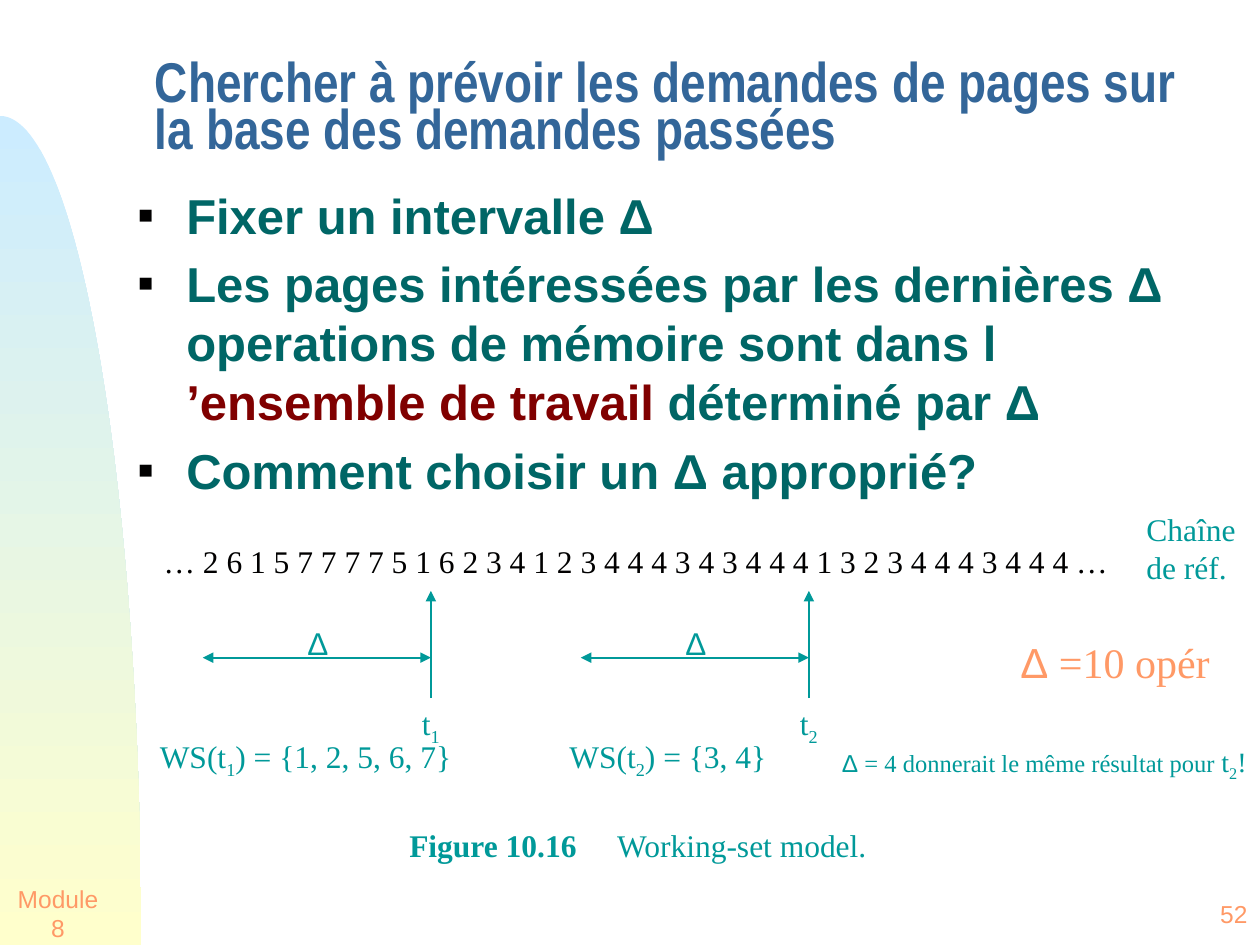
"""Build the working-set model slide."""
from lxml import etree
from pptx import Presentation
from pptx.dml.color import RGBColor
from pptx.enum.shapes import MSO_CONNECTOR
from pptx.enum.text import MSO_ANCHOR, MSO_AUTO_SIZE, PP_ALIGN
from pptx.oxml.ns import qn
from pptx.util import Inches, Pt

LEFT, CENTER, RIGHT = PP_ALIGN.LEFT, PP_ALIGN.CENTER, PP_ALIGN.RIGHT
TOP, MIDDLE = MSO_ANCHOR.TOP, MSO_ANCHOR.MIDDLE
STRAIGHT = MSO_CONNECTOR.STRAIGHT
NO_FIT = MSO_AUTO_SIZE.NONE
SERIF, SANS, NARROW = "Times New Roman", "Arial", "Arial Narrow"
COLORS = {
    "title": "336699", "body": "006666", "accent": "800000", "teal": "009999",
    "orange": "FF9966", "ink": "010000", "sky": "CCECFF", "cream": "FFFFCC",
}
REFERENCES = "2615777751623412344434344413234443444"


def rgb(name):
    """Return the named colour."""
    return RGBColor.from_string(COLORS[name])


def add_runs(p, runs, size=18, font=SERIF, color="teal", bold=False):
    """Fill a paragraph from a string or from (text, overrides) pairs."""
    pairs = [(runs, {})] if isinstance(runs, str) else runs
    for text, changes in pairs:
        r = p.add_run()
        r.text = text
        r.font.size = Pt(changes.get("size", size))
        r.font.name = changes.get("font", font)
        r.font.bold = changes.get("bold", bold)
        r.font.color.rgb = rgb(changes.get("color", color))
        if changes.get("sub"):
            r.font._element.set("baseline", "-25000")


def add_text(s, box, runs, align=LEFT, anchor=TOP, wrap=False, **fmt):
    """Add a text box with one paragraph and return the paragraph."""
    tf = s.shapes.add_textbox(*map(Inches, box)).text_frame
    tf.word_wrap = wrap
    tf.vertical_anchor = anchor
    p = tf.paragraphs[0]
    p.alignment = align
    add_runs(p, runs, **fmt)
    return p


def add_arrow(s, start, end, width, ends=("tailEnd",)):
    """Add a straight line with triangular heads."""
    c = s.shapes.add_connector(STRAIGHT, *map(Inches, start + end))
    c.line.color.rgb = rgb("teal")
    c.line.width = Pt(width)
    ln = c.line._get_or_add_ln()
    for name in ends:
        etree.SubElement(ln, qn("a:" + name), type="triangle")
    etree.SubElement(c._element.spPr, qn("a:effectLst"))


def add_side_curve(s):
    """Add the gradient quarter ellipse on the left edge."""
    curve = [(0, 0.92), (0.62, 0.92), (1.12, 3.87), (1.12, 7.5)]
    steps = 60
    points = []
    for i in range(steps + 1):
        t = i / steps
        weights = ((1 - t) ** 3, 3 * t * (1 - t) ** 2, 3 * t * t * (1 - t), t ** 3)
        points.append(tuple(Inches(sum(w * pt[k] for w, pt in zip(weights, curve)))
                            for k in (0, 1)))
    fb = s.shapes.build_freeform(*points[0])
    fb.add_line_segments(points[1:] + [(0, Inches(7.5))], close=True)
    sp = fb.convert_to_shape()
    sp.shadow.inherit = False
    sp.line.fill.background()
    sp.fill.gradient()
    sp.fill.gradient_angle = 270
    for stop, name, place in zip(sp.fill.gradient_stops, ("sky", "cream"), (0, 1)):
        stop.color.rgb = rgb(name)
        stop.position = place


def add_title(s, text):
    """Place and format the title placeholder."""
    sp = s.shapes.title
    sp.left, sp.top, sp.width, sp.height = map(Inches, (1.13, 0.36, 8.62, 1.05))
    tf = sp.text_frame
    tf.auto_size = NO_FIT
    tf.vertical_anchor = MIDDLE
    p = tf.paragraphs[0]
    p.alignment = LEFT
    p.line_spacing = 0.7
    add_runs(p, text, size=32, font=NARROW, color="title", bold=True)


def add_bullets(s, box, items):
    """Add a text box of square-bulleted paragraphs."""
    tf = s.shapes.add_textbox(*map(Inches, box)).text_frame
    tf.word_wrap = True
    for i, runs in enumerate(items):
        p = tf.add_paragraph() if i else tf.paragraphs[0]
        p.space_before = Pt(5.6)
        add_runs(p, runs, size=28, font=SANS, color="body", bold=True)
        pPr = p._p.get_or_add_pPr()
        pPr.set("marL", str(Inches(0.38)))
        pPr.set("indent", str(-Inches(0.38)))
        clr = etree.SubElement(pPr, qn("a:buClr"))
        etree.SubElement(clr, qn("a:srgbClr"), val=COLORS["ink"])
        etree.SubElement(pPr, qn("a:buSzPct"), val="50000")
        etree.SubElement(pPr, qn("a:buFont"), typeface=SANS)
        etree.SubElement(pPr, qn("a:buChar"), char="■")


def add_window(s, x, index, ws_left, ws_width, pages):
    """Add the interval, instant and working set that end at x."""
    sub = (index, {"sub": True})
    add_arrow(s, (x - 1.81, 5.22), (x, 5.22), 1, ("headEnd", "tailEnd"))
    add_arrow(s, (x, 5.54), (x, 4.69), 1.5)
    add_text(s, (x - 1.08, 4.9, 0.35, 0.4), "Δ", font=SANS)
    add_text(s, (x - 0.17, 5.54, 0.35, 0.4), [("t", {}), sub])
    add_text(s, (ws_left, 5.8, ws_width, 0.4),
             [("WS(t", {}), sub, (f") = {{{pages}}}", {})])


def add_caption(s):
    """Add the figure caption with a tab between number and name."""
    p = add_text(s, (3.15, 6.51, 3.85, 0.4),
                 [("Figure 10.16\t", {"bold": True}), ("Working-set model.", {})])
    tabs = etree.SubElement(p._p.get_or_add_pPr(), qn("a:tabLst"))
    etree.SubElement(tabs, qn("a:tab"), pos=str(Inches(1.65)), algn="l")


def main():
    """Build and save the slide."""
    prs = Presentation()
    prs.slide_width, prs.slide_height = Inches(10), Inches(7.5)
    s = prs.slides.add_slide(prs.slide_layouts[5])
    add_side_curve(s)
    footer = {"anchor": MIDDLE, "size": 14, "font": SANS, "color": "orange"}
    add_text(s, (0, 7, 0.92, 0.5), "Module 8", align=CENTER, **footer)
    add_text(s, (9.3, 7, 0.7, 0.5), "52", align=RIGHT, **footer)
    add_title(s, "Chercher à prévoir les demandes de pages sur la base des demandes passées")
    add_bullets(s, (1, 1.42, 8.62, 5.21), [
        "Fixer un intervalle Δ",
        [("Les pages intéressées par les dernières Δ operations de mémoire sont dans l ", {}),
         ("’ensemble de travail", {"color": "accent"}),
         (" déterminé par Δ", {})],
        "Comment choisir un Δ approprié?",
    ])
    add_text(s, (1.2, 4.25, 7.76, 0.4), f"… {' '.join(REFERENCES)} …", color="ink")
    add_window(s, 3.42, "1", 1.17, 2.53, "1, 2, 5, 6, 7")
    add_window(s, 6.42, "2", 4.42, 1.78, "3, 4")
    add_caption(s)
    add_text(s, (8, 5, 1.9, 0.5), [("Δ", {"font": SANS}), (" =10 opér", {})],
             size=24, color="orange")
    add_text(s, (9, 4, 1, 0.7), "Chaîne de réf.", wrap=True)
    add_text(s, (6.5, 5.75, 3.5, 0.5), [
        (" ", {"size": 24}), ("Δ", {"font": SANS}),
        (" = 4 donnerait le même résultat pour ", {}),
        ("t", {"size": 16}), ("2", {"size": 16, "sub": True}), ("!", {"size": 16}),
    ], size=14)
    prs.save("out.pptx")


if __name__ == "__main__":
    main()
